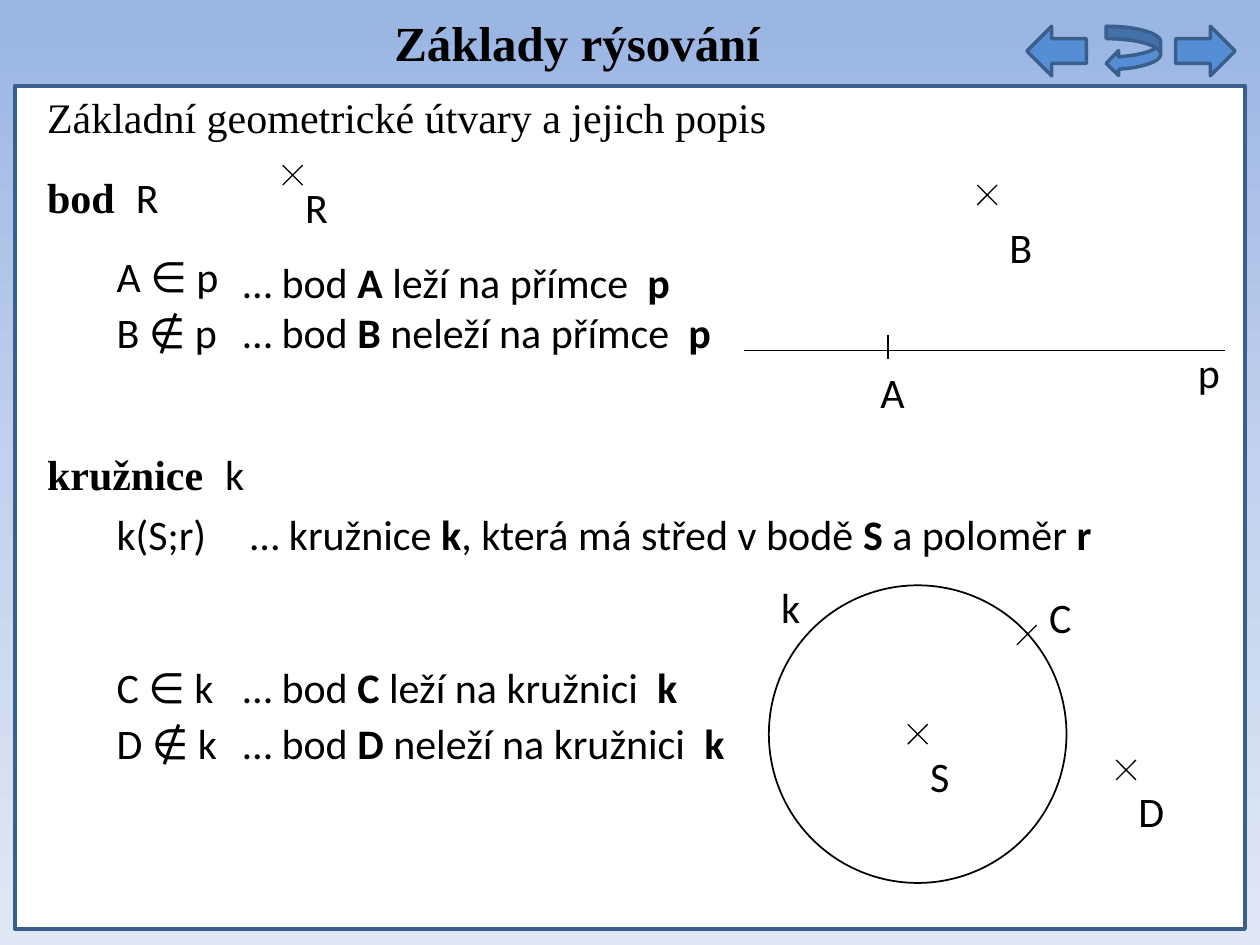
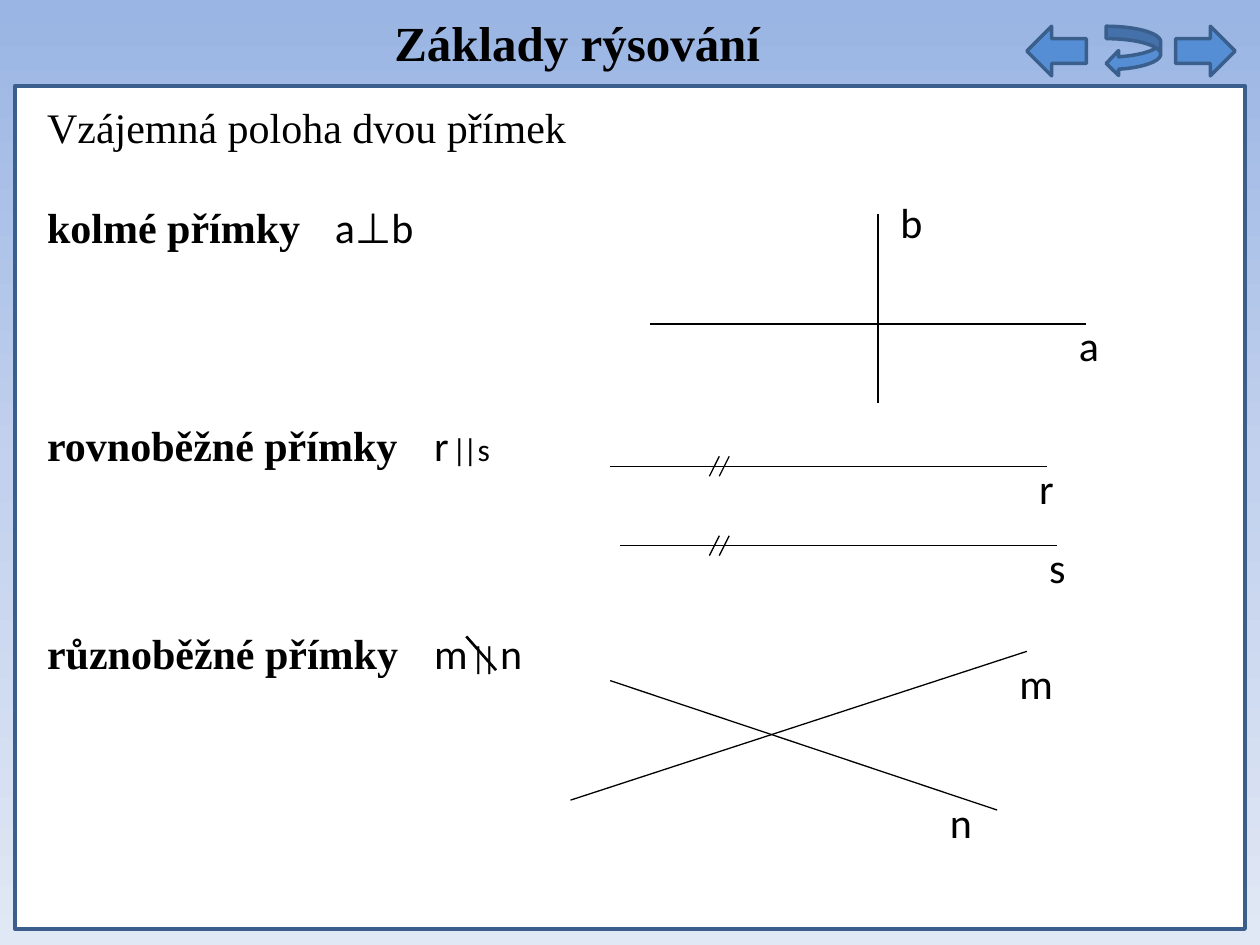
"""Builds two lesson slides on points, circles and pairs of lines."""
from copy import deepcopy

from lxml import etree
from pptx import Presentation
from pptx.dml.color import RGBColor
from pptx.enum.shapes import MSO_CONNECTOR, MSO_SHAPE
from pptx.enum.text import MSO_AUTO_SIZE
from pptx.oxml.ns import qn
from pptx.util import Cm, Pt

BLACK = RGBColor(0x00, 0x00, 0x00)
WHITE = RGBColor(0xFF, 0xFF, 0xFF)
BLUE = RGBColor(0x55, 0x8E, 0xD5)
NAVY = RGBColor(0x3A, 0x5F, 0x8C)
SKY = [RGBColor(0x9A, 0xB5, 0xE4), RGBColor(0xC2, 0xD1, 0xED), RGBColor(0xE1, 0xE8, 0xF5)]
SERIF = "Times New Roman"
SANS = "Calibri"
RECT = MSO_SHAPE.RECTANGLE
ROUND = MSO_SHAPE.OVAL
BACK = MSO_SHAPE.LEFT_ARROW
BEND = MSO_SHAPE.CURVED_LEFT_ARROW
NEXT = MSO_SHAPE.RIGHT_ARROW
LINE = MSO_CONNECTOR.STRAIGHT
GROW = MSO_AUTO_SIZE.SHAPE_TO_FIT_TEXT


def write(slide, text, x, y, wide=1.6, high=1.27, size=24, font=SANS, bold=False, wrap=True, small=False):
    """Add a text box; parts between asterisks are bold, or small and tight."""
    box = slide.shapes.add_textbox(Cm(x), Cm(y), Cm(wide), Cm(high))
    frame = box.text_frame
    frame.word_wrap = wrap
    frame.auto_size = GROW
    for i, part in enumerate(text.split("*")):
        if not part:
            continue
        marked = i % 2 == 1
        run = frame.paragraphs[0].add_run()
        run.text = part
        run.font.name = font
        run.font.color.rgb = BLACK
        run.font.bold = bold or (marked and not small)
        run.font.size = Pt(18 if marked and small else size)
        if marked and small:
            run.font._element.set("spc", "-200")


def draw(slide, x1, y1, x2, y2, thick=0.75):
    """Add a black line between two points."""
    line = slide.shapes.add_connector(LINE, Cm(x1), Cm(y1), Cm(x2), Cm(y2))
    line.line.color.rgb = BLACK
    line.line.width = Pt(thick)
    etree.SubElement(line._element.spPr, qn("a:effectLst"))


deck = Presentation()
deck.slide_width = Cm(25.4)
deck.slide_height = Cm(19.05)

fill = deck.slide_master.background.fill
fill.gradient()
fill.gradient_angle = 270
stops = deck.slide_master.element.find(".//" + qn("a:gsLst"))
stops.insert(1, deepcopy(stops[0]))
for i, stop in enumerate(fill.gradient_stops):
    stop.color.rgb = SKY[i]
    stop.position = i / 2

points, pairs = [deck.slides.add_slide(deck.slide_layouts[6]) for _ in range(2)]

for slide in (points, pairs):
    for kind, x, y, wide, high, tint in [
        (RECT, 0.3, 1.73, 24.8, 17, WHITE),
        (BACK, 20.7, 0.53, 1.2, 1, BLUE),
        (BEND, 22.3, 0.53, 1.1, 1, BLUE),
        (NEXT, 23.7, 0.53, 1.2, 1, BLUE),
    ]:
        shape = slide.shapes.add_shape(kind, Cm(x), Cm(y), Cm(wide), Cm(high))
        shape.shadow.inherit = False
        shape.fill.solid()
        shape.fill.fore_color.rgb = tint
        shape.line.color.rgb = NAVY
        shape.line.width = Pt(2)
    write(slide, "Základy rýsování", 7.7, 0.13, 7.98, 1.45, size=28, font=SERIF, bold=True, wrap=False)

write(points, "Základní geometrické útvary a jejich popis", 0.7, 1.73, 15.14, font=SERIF, wrap=False)
write(pairs, "Vzájemná poloha dvou přímek", 0.7, 1.93, 11.07, font=SERIF, wrap=False)

for slide, term, y, wide in [
    (points, "bod", 3.33, 2),
    (points, "kružnice", 8.92, 3.81),
    (pairs, "kolmé přímky", 3.94, 6.4),
    (pairs, "rovnoběžné přímky", 8.33, 7.8),
    (pairs, "různoběžné přímky", 12.52, 7.8),
]:
    write(slide, term, 0.7, y, wide, font=SERIF, bold=True)

write(points, "R", 2.49, 3.33, 0.97, wrap=False)
write(points, "k", 4.29, 8.92, 0.89, wrap=False)
write(points, "k(S;r)", 2.1, 10.13, 4.09)
write(points, "… kružnice *k*, která má střed v bodě *S* a poloměr *r*", 4.8, 10.13, 18.29)

for sign, y, wide, note, top in [
    ("A ∈ p", 4.93, 2.64, "… bod *A* leží na přímce  *p*", 5.05),
    ("B ∉ p", 6.05, 2.64, "… bod *B* neleží na přímce  *p*", 6.05),
    ("C ∈ k", 13.21, 2.54, "… bod *C* leží na kružnici  *k*", 13.21),
    ("D ∉ k", 14.33, 2.67, "… bod *D* neleží na kružnici  *k*", 14.33),
]:
    write(points, sign, 2.1, y, wide, wrap=False)
    write(points, note, 4.65, top, 10.85)

ring = points.shapes.add_shape(ROUND, Cm(15.5), Cm(11.8), Cm(6), Cm(6))
ring.shadow.inherit = False
ring.fill.background()
ring.line.color.rgb = BLACK
ring.line.width = Pt(1)

for x, y in [(5.7, 3.33), (19.7, 3.73), (18.3, 14.6), (22.5, 15.32)]:
    draw(points, x, y, x + 0.4, y + 0.4)
    draw(points, x + 0.4, y, x, y + 0.4)
draw(points, 15, 7.06, 24.7, 7.06)
draw(points, 17.9, 6.76, 17.9, 7.24)
draw(points, 20.9, 12.6, 20.5, 13)

write(pairs, "a⊥b", 6.5, 3.94, 2.39)
write(pairs, "r* || s*", 8.5, 8.33, 2.31, small=True)
write(pairs, "m* || *n", 8.5, 12.52, 2.31, small=True)

for ends in [
    (13.1, 6.53, 21.9, 6.53),
    (17.7, 8.13, 17.7, 4.32),
    (12.3, 9.4, 21.1, 9.4),
    (12.5, 11, 21.3, 11),
    (12.3, 13.72, 20.1, 16.33),
    (11.5, 16.13, 20.7, 13.13),
]:
    draw(pairs, *ends)
for y in (9.2, 10.8):
    for x in (14.3, 14.5):
        draw(pairs, x + 0.2, y, x, y + 0.4)
draw(pairs, 9.4, 12.83, 10, 13.51, thick=1.5)

for slide, name, x, y in [
    (points, "R", 5.9, 3.53),
    (points, "B", 20.1, 4.34),
    (points, "p", 23.9, 6.86),
    (points, "A", 17.5, 7.26),
    (points, "k", 15.5, 11.6),
    (points, "C", 20.9, 11.8),
    (points, "S", 18.5, 15),
    (points, "D", 22.7, 15.72),
    (pairs, "b", 17.9, 3.84),
    (pairs, "a", 21.5, 6.32),
    (pairs, "r", 20.7, 9.2),
    (pairs, "s", 20.9, 10.8),
    (pairs, "m", 20.3, 13.13),
    (pairs, "n", 18.9, 15.93),
]:
    write(slide, name, x, y)

deck.save("out.pptx")
